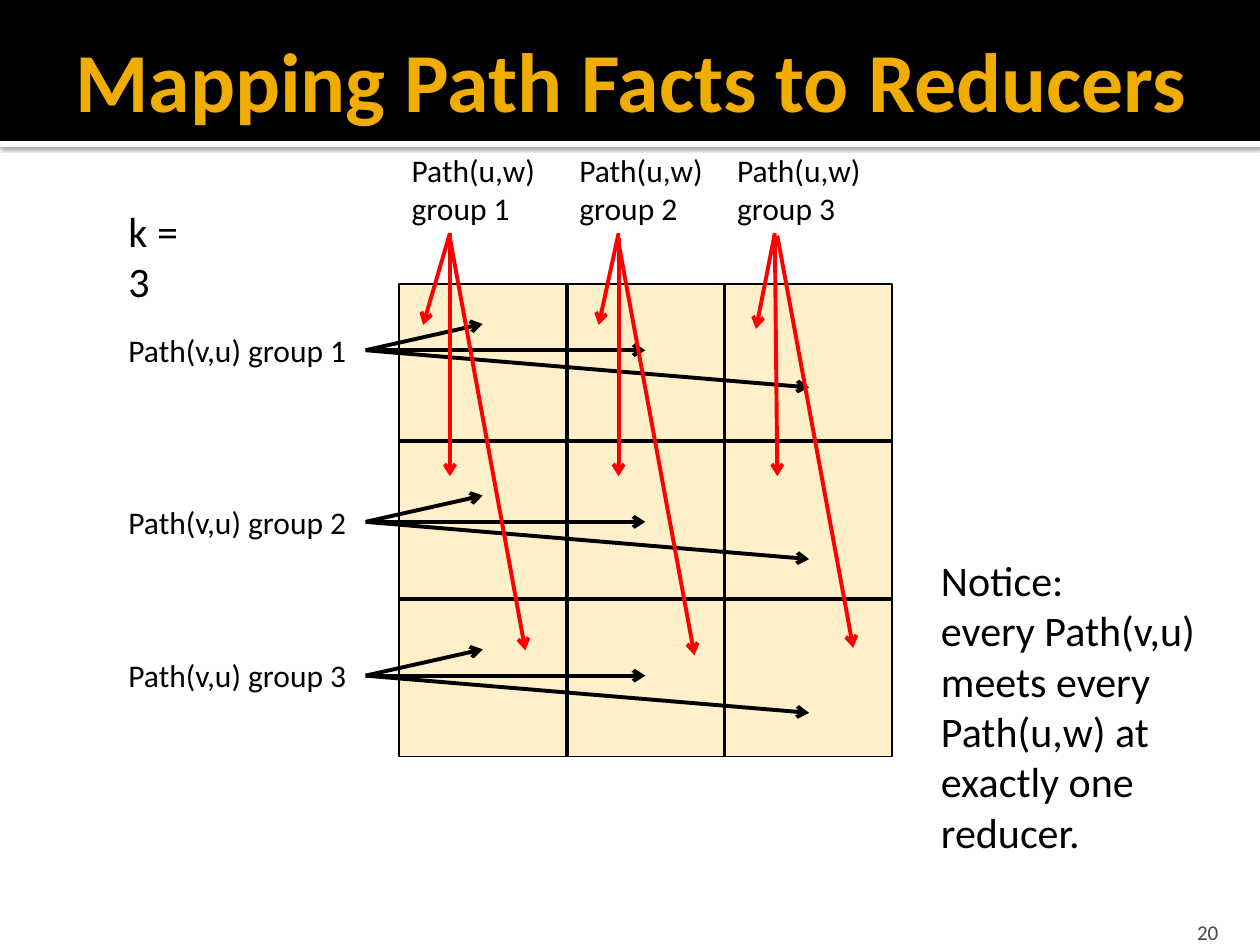
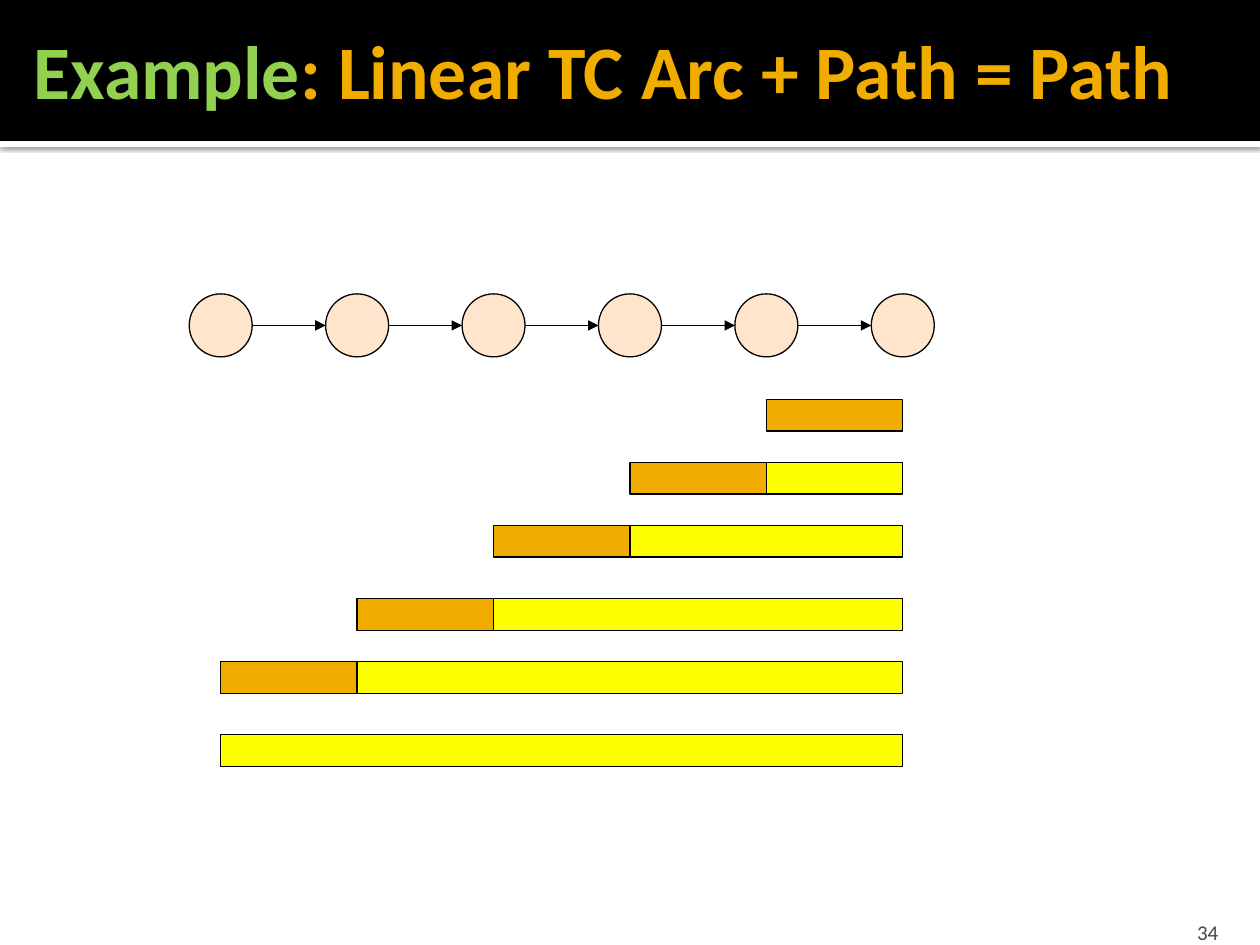
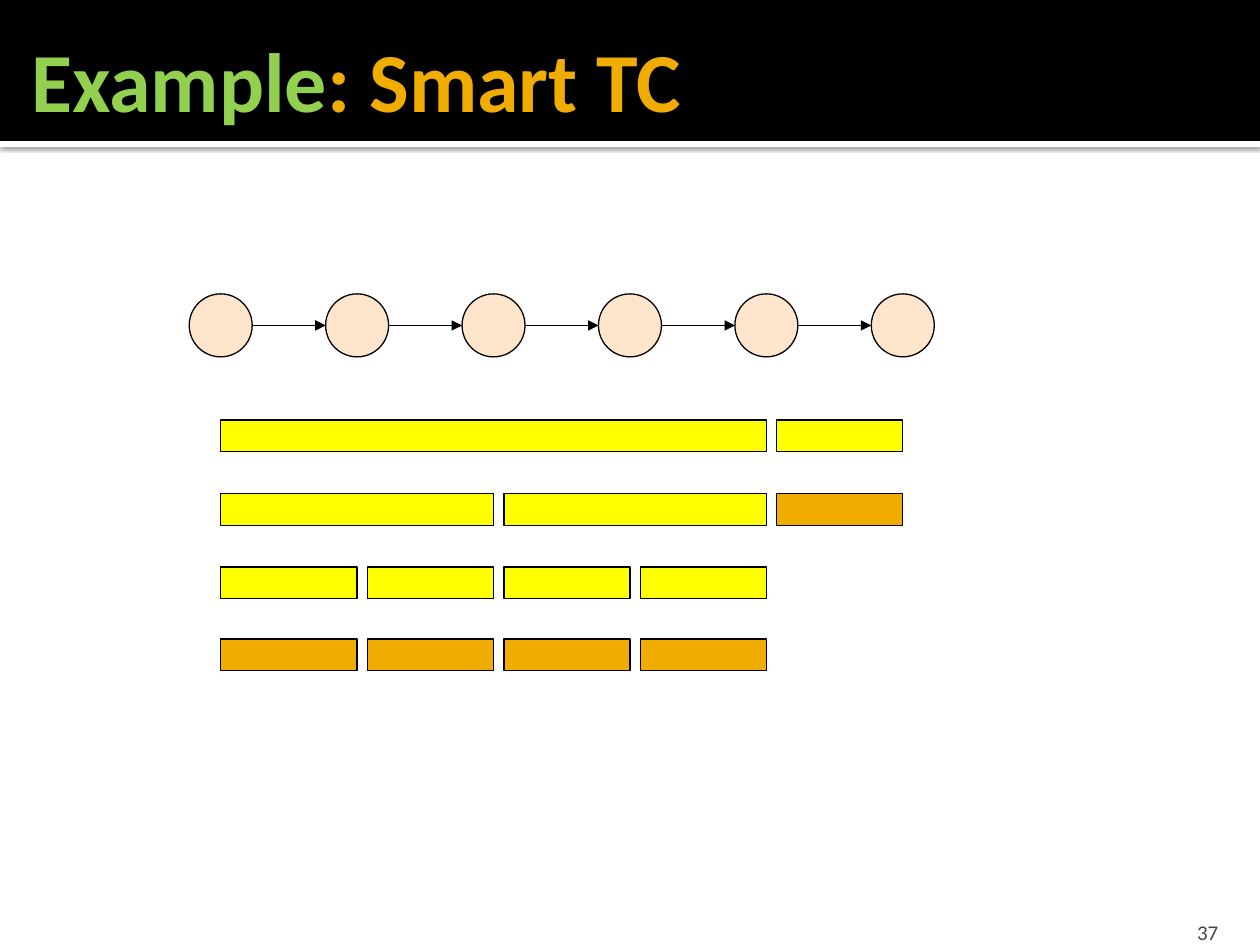
"""Build three slides on computing transitive closure with reducers."""
from lxml.etree import SubElement
from pptx import Presentation
from pptx.dml.color import RGBColor
from pptx.enum.shapes import MSO_CONNECTOR, MSO_SHAPE
from pptx.enum.text import MSO_ANCHOR, MSO_AUTO_SIZE, PP_ALIGN
from pptx.oxml import parse_xml
from pptx.oxml.ns import nsdecls, qn
from pptx.util import Cm, Pt

FONT = "Calibri"
BLACK, WHITE, GREY, RED = "000000", "FFFFFF", "454545", "FF0000"
GOLD, GREEN, YELLOW = "F0AD00", "92D050", "FFFF00"
CREAM, PEACH = "FFF0C9", "FFCC99"

NODE_COUNT, NODE_SIZE, NODE_STEP = 6, 1.27, 2.75
FIRST_NODE_X, NODE_Y = 4.45, 6.56
BAR_HEIGHT = 0.64

GRID_LEFT, GRID_TOP, GRID_WIDTH, GRID_HEIGHT = 8.05, 5.72, 9.94, 9.53
CELL_STEP = 3.175
ROW_LABEL_TOPS = (6.55, 10.01, 13.11)
ROW_ARROW_STEPS = ((2.36, -0.53), (5.64, 0), (8.94, 0.75))
COLUMN_FANS = (
    (8.05, ((9.07, 4.7, 8.53, 6.55), (9.07, 4.7, 9.07, 9.6), (9.07, 4.8, 10.59, 13.11))),
    (11.43, ((12.47, 4.7, 12.07, 6.55), (12.47, 4.8, 12.47, 9.6), (12.47, 4.9, 14, 13.21))),
    (14.61, ((15.62, 4.7, 15.24, 6.63), (15.62, 4.8, 15.67, 9.6), (15.67, 4.75, 17.2, 13.06))),
)


def color(hex_string):
    """Turn a hex string into a colour."""
    return RGBColor.from_string(hex_string)


def add_block(page, kind, left, top, width, height, fill, line=None):
    """Add a filled preset shape without a shadow."""
    block = page.shapes.add_shape(kind, Cm(left), Cm(top), Cm(width), Cm(height))
    block.shadow.inherit = False
    block.fill.solid()
    block.fill.fore_color.rgb = color(fill)
    if line:
        block.line.color.rgb = color(BLACK)
        block.line.width = Pt(line)
    else:
        block.line.fill.background()
    return block


def add_line(page, x1, y1, x2, y2, hue=BLACK, width=2.25, arrowhead=None):
    """Add a straight line, with an arrowhead at its end if one is named."""
    line = page.shapes.add_connector(MSO_CONNECTOR.STRAIGHT, Cm(x1), Cm(y1), Cm(x2), Cm(y2))
    line.line.color.rgb = color(hue)
    line.line.width = Pt(width)
    if arrowhead:
        SubElement(line.line._get_or_add_ln(), qn("a:tailEnd"), type=arrowhead)
    SubElement(line._element.spPr, qn("a:effectLst"))
    return line


def add_text(page, text, left, top, width, height, size, wrap=False, hue=BLACK):
    """Add a text box with one paragraph for each line of text."""
    box = page.shapes.add_textbox(Cm(left), Cm(top), Cm(width), Cm(height))
    frame = box.text_frame
    frame.word_wrap = wrap
    frame.auto_size = MSO_AUTO_SIZE.NONE
    frame.text = text
    for para in frame.paragraphs:
        para.font.name = FONT
        para.font.size = Pt(size)
        para.font.color.rgb = color(hue)
    return box


def add_master_bands(deck, page):
    """Put the black title band and its shadowed white edge on the master."""
    edge = add_block(page, MSO_SHAPE.RECTANGLE, 0, 2.84, 25.4, 0.13, WHITE)
    edge._element.spPr.find(qn("a:effectLst")).append(parse_xml(
        f'<a:outerShdw {nsdecls("a")} blurRad="31750" dist="10160" dir="5400000" rotWithShape="0">'
        f'<a:srgbClr val="{BLACK}"><a:alpha val="60000"/></a:srgbClr></a:outerShdw>'))
    band = add_block(page, MSO_SHAPE.RECTANGLE, 0, 0, 25.4, 2.84, BLACK)
    for index, shape in enumerate((edge, band), start=2):
        deck.slide_master.shapes.element.insert(index, shape.element)


def add_page(deck, number, spans, size, left, top, width, height):
    """Add a page with its title, made of coloured spans, and its number."""
    page = deck.slides.add_slide(deck.slide_layouts[5])
    title = page.shapes.title
    title.left, title.top, title.width, title.height = Cm(left), Cm(top), Cm(width), Cm(height)
    frame = title.text_frame
    frame.auto_size = MSO_AUTO_SIZE.NONE
    frame.word_wrap = True
    frame.vertical_anchor = MSO_ANCHOR.MIDDLE
    frame.margin_left = Cm(0.25)
    frame.margin_top = frame.margin_right = frame.margin_bottom = Cm(0.13)
    para = frame.paragraphs[0]
    para.alignment = PP_ALIGN.LEFT
    para.font.name, para.font.size, para.font.bold = FONT, Pt(size), True
    for text, hue in spans:
        span = para.add_run()
        span.text = text
        span.font.color.rgb = color(hue)
    box = add_text(page, str(number), 22.78, 18.29, 2.03, 0.76, 12, True, GREY)
    box.text_frame.vertical_anchor = MSO_ANCHOR.BOTTOM
    box.text_frame.margin_bottom = 0
    box.text_frame.paragraphs[0].alignment = PP_ALIGN.RIGHT
    return page


def add_reducer_grid(page):
    """Draw the three by three grid of reducers."""
    right, bottom = GRID_LEFT + GRID_WIDTH, GRID_TOP + GRID_HEIGHT
    add_block(page, MSO_SHAPE.RECTANGLE, GRID_LEFT, GRID_TOP, GRID_WIDTH, GRID_HEIGHT, CREAM, 1)
    for index in range(2):
        x = 11.43 + index * CELL_STEP
        y = GRID_TOP + (index + 1) * CELL_STEP
        add_line(page, x, GRID_TOP, x, bottom)
        add_line(page, GRID_LEFT, y, right, y)


def add_row_fan(page, group, top):
    """Add a row label and the arrows from it to the three reducers."""
    left, width, height = 2.34, 5.03, 1.02
    label = add_text(page, f"Path(v,u) group {group}", left, top, width, height, 18)
    x, y = left + width, top + height / 2
    for across, down in ROW_ARROW_STEPS:
        arrow = add_line(page, x, y, x + across, y + down, arrowhead="arrow")
        arrow.begin_connect(label, 3)


def add_column_fan(page, group, left, arrows):
    """Add a column label and the red arrows below it."""
    add_text(page, f"Path(u,w)\ngroup {group}", left, 2.92, 3.1, 1.8, 18)
    for ends in arrows:
        add_line(page, *ends, RED, arrowhead="arrow")


def node_x(index):
    """Return the centre of a node on the chain."""
    return FIRST_NODE_X + index * NODE_STEP


def add_chain(page):
    """Draw the chain of nodes joined by arrows."""
    radius = NODE_SIZE / 2
    for index in range(NODE_COUNT):
        x = node_x(index)
        node = add_block(page, MSO_SHAPE.OVAL, x - radius, NODE_Y - radius,
                         NODE_SIZE, NODE_SIZE, PEACH, 0.75)
        tint = node._element.spPr.find(qn("a:solidFill"))[0]
        SubElement(tint, qn("a:alpha"), val="50000")
        if index:
            add_line(page, node_x(index - 1) + radius, NODE_Y, x - radius, NODE_Y,
                     width=0.75, arrowhead="triangle")


def add_bar(page, first, last, top, fill, gap=0):
    """Add a bar that spans the path between two nodes."""
    left = node_x(first) + (gap if first else 0)
    add_block(page, MSO_SHAPE.RECTANGLE, left, top, node_x(last) - left, BAR_HEIGHT, fill, 0.75)


def fill_mapping_page(page):
    """Show how path facts meet at the reducers."""
    add_reducer_grid(page)
    for group, top in enumerate(ROW_LABEL_TOPS, start=1):
        add_row_fan(page, group, top)
    for group, (left, arrows) in enumerate(COLUMN_FANS, start=1):
        add_column_fan(page, group, left, arrows)
    add_text(page, "k = 3", 2.34, 4.01, 2.08, 1.27, 24, True)
    notice = "Notice:\nevery Path(v,u)\nmeets every\nPath(u,w) at\nexactly one\nreducer."
    add_text(page, notice, 18.72, 11.05, 5.82, 6.4, 24)


def fill_linear_page(page):
    """Show paths that grow by one arc in each round."""
    add_chain(page)
    end = NODE_COUNT - 1
    for step, top in enumerate((8.05, 9.32, 10.59, 12.07, 13.34, 14.81)):
        joint = end - step
        if step:
            add_bar(page, joint, end, top, YELLOW)
        if joint:
            add_bar(page, joint - 1, joint, top, GOLD)


def fill_smart_page(page):
    """Show paths that are halved in each round."""
    add_chain(page)
    rows = (
        (8.47, ((0, 4, YELLOW), (4, 5, YELLOW))),
        (9.95, ((0, 2, YELLOW), (2, 4, YELLOW), (4, 5, GOLD))),
        (11.43, [(index, index + 1, YELLOW) for index in range(4)]),
        (12.88, [(index, index + 1, GOLD) for index in range(4)]),
    )
    for top, bars in rows:
        for first, last, fill in bars:
            add_bar(page, first, last, top, fill, gap=0.21)


def main():
    """Build and save the deck."""
    deck = Presentation()
    deck.slide_width, deck.slide_height = Cm(25.4), Cm(19.05)

    mapping = add_page(deck, 20, [("Mapping Path Facts to Reducers", GOLD)],
                       48, 1.27, 0.43, 24.13, 2.34)
    add_master_bands(deck, mapping)
    fill_mapping_page(mapping)

    linear = add_page(deck, 34, [("Example", GREEN), (": Linear TC Arc + Path = Path", GOLD)],
                      43.2, 0.43, -0.2, 24.97, 3.18)
    fill_linear_page(linear)

    smart = add_page(deck, 37, [(" ", GOLD), ("Example", GREEN), (": Smart TC", GOLD)],
                     48, 0, 0, 25.4, 3.18)
    fill_smart_page(smart)

    deck.save("out.pptx")


if __name__ == "__main__":
    main()
